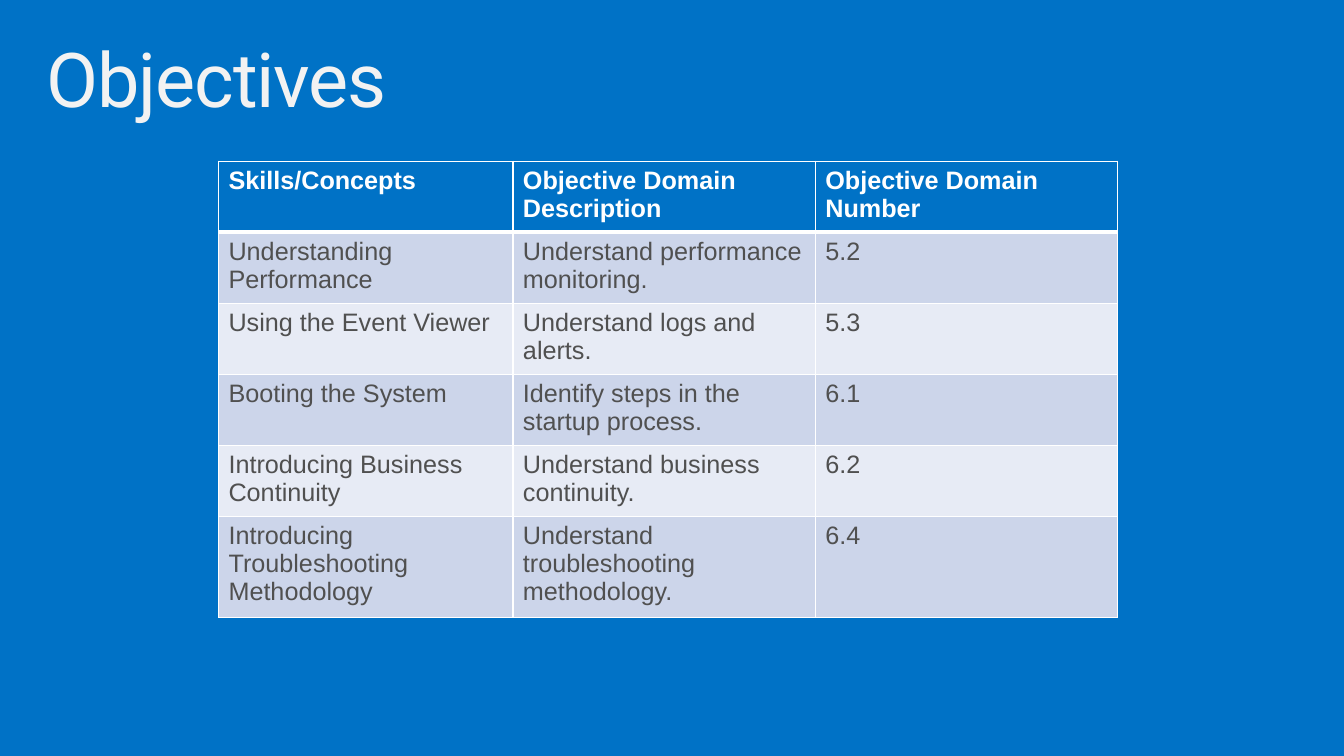
from lxml import etree
from pptx import Presentation
from pptx import util as u
from pptx.dml.color import RGBColor
from pptx.enum import text
from pptx.oxml.ns import qn

COLORS = {
    "background": "0072C6",
    "title": "F2F2F2",
    "header": "0072C6",
    "header_text": "FFFFFF",
    "body_text": "505050",
    "odd_row": "CCD5EA",
    "even_row": "E7EBF5",
    "border": "FFFFFF",
}

TITLE_FONT = {"name": "Roboto", "size": u.Pt(54), "bold": False}
HEADER_FONT = {"name": "Arial", "size": u.Pt(18), "bold": True}
BODY_FONT = {**HEADER_FONT, "bold": False}

OBJECTIVES = [
    ("Skills/Concepts", "Objective Domain Description", "Objective Domain Number"),
    ("Understanding Performance", "Understand performance monitoring.", "5.2"),
    ("Using the Event Viewer", "Understand logs and alerts.", "5.3"),
    ("Booting the System", "Identify steps in the startup process.", "6.1"),
    ("Introducing Business Continuity", "Understand business continuity.", "6.2"),
    ("Introducing Troubleshooting Methodology",
     "Understand troubleshooting methodology.", "6.4"),
]
COLUMN_WIDTHS = [7.42, 7.62, 7.62]
ROW_HEIGHTS = [1.79] * 5 + [2.54]


def rgb(name):
    return RGBColor.from_string(COLORS[name])


def set_format(target, values):
    for attribute, value in values.items():
        setattr(target, attribute, value)


def write_text(paragraph, wording, font, color):
    run = paragraph.add_run()
    run.text = wording
    set_format(run.font, font)
    run.font.color.rgb = rgb(color)
    return run


def add_title(slide, wording):
    box = slide.shapes.add_textbox(u.Cm(0.76), u.Cm(0.81), u.Cm(32.39), u.Cm(2.49))
    set_format(box.text_frame, {
        "word_wrap": True,
        "vertical_anchor": text.MSO_ANCHOR.TOP,
        "margin_left": u.Cm(0.41), "margin_right": u.Cm(0.41),
        "margin_top": u.Cm(0.25), "margin_bottom": u.Cm(0.25),
    })
    paragraph = box.text_frame.paragraphs[0]
    paragraph.line_spacing = 0.9
    run = write_text(paragraph, wording, TITLE_FONT, "title")
    run.font._element.set("spc", "-80")


def add_borders(cell, widths):
    properties = cell._tc.get_or_add_tcPr()
    for side, width in widths.items():
        line = etree.SubElement(properties, qn(f"a:ln{side}"), w=str(u.Pt(width)))
        fill = etree.SubElement(line, qn("a:solidFill"))
        etree.SubElement(fill, qn("a:srgbClr"), val=COLORS["border"])


def format_cell(cell, wording, row):
    header = row == 0
    set_format(cell, {
        "margin_left": u.Cm(0.25), "margin_right": u.Cm(0.25),
        "margin_top": u.Cm(0.13), "margin_bottom": u.Cm(0.13),
    })
    # A thick rule separates the header from the first body row
    add_borders(cell, {"L": 1, "R": 1, "T": 3 if row == 1 else 1, "B": 3 if header else 1})
    cell.fill.solid()
    band = "header" if header else "odd_row" if row % 2 else "even_row"
    cell.fill.fore_color.rgb = rgb(band)
    write_text(cell.text_frame.paragraphs[0], wording,
               HEADER_FONT if header else BODY_FONT,
               "header_text" if header else "body_text")


def add_objectives_table(slide, rows):
    frame = slide.shapes.add_table(
        len(rows), len(COLUMN_WIDTHS), u.Cm(5.51), u.Cm(4.06),
        u.Cm(sum(COLUMN_WIDTHS)), u.Cm(sum(ROW_HEIGHTS)))
    table = frame.table
    for column, width in zip(table.columns, COLUMN_WIDTHS):
        column.width = u.Cm(width)
    for row, height in zip(table.rows, ROW_HEIGHTS):
        row.height = u.Cm(height)
    for row, wordings in enumerate(rows):
        for column, wording in enumerate(wordings):
            format_cell(table.cell(row, column), wording, row)


def main():
    presentation = Presentation()
    presentation.slide_width = u.Cm(33.87)
    presentation.slide_height = u.Cm(19.05)
    slide = presentation.slides.add_slide(presentation.slide_layouts[6])

    # Background
    slide.background.fill.solid()
    slide.background.fill.fore_color.rgb = rgb("background")

    # Content
    add_title(slide, "Objectives")
    add_objectives_table(slide, OBJECTIVES)

    presentation.save("out.pptx")


if __name__ == "__main__":
    main()
